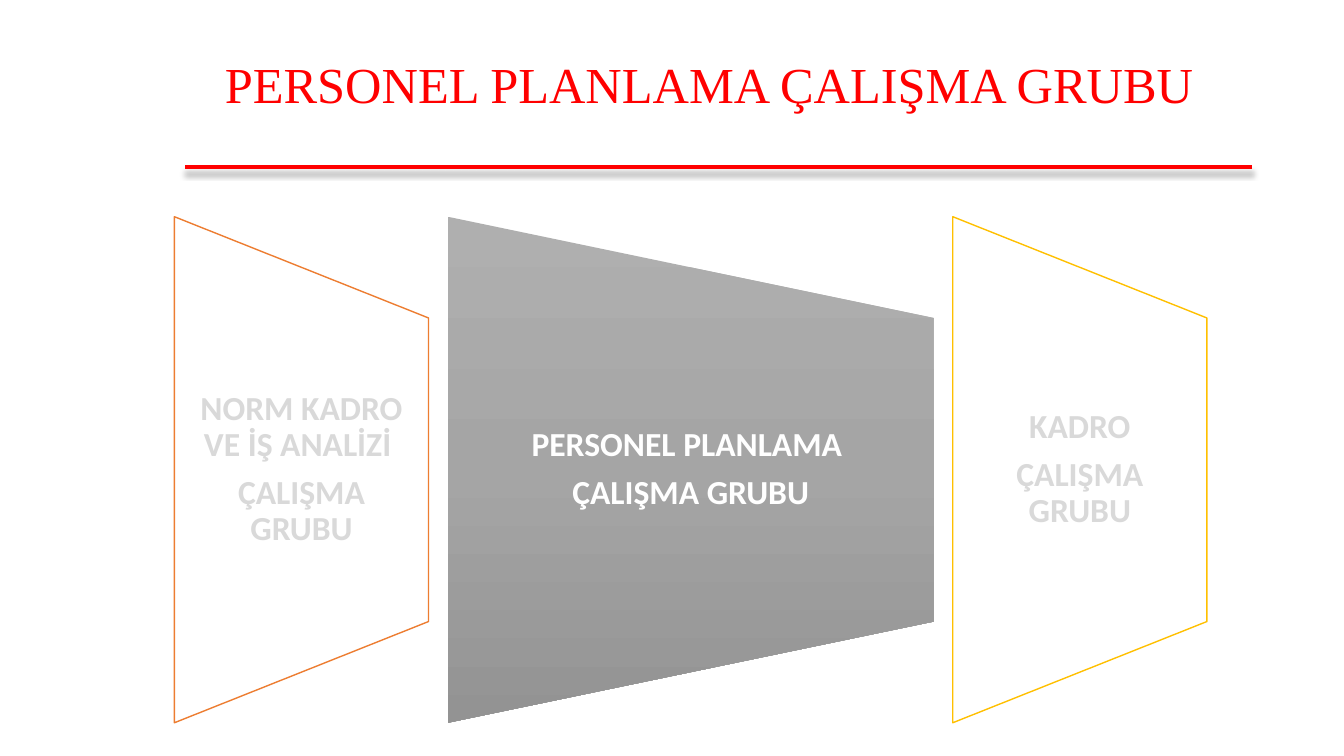
from dataclasses import dataclass

from lxml.etree import SubElement
from pptx import Presentation
from pptx.dml.color import RGBColor
from pptx.enum.shapes import MSO_CONNECTOR, MSO_SHAPE
from pptx.enum.text import MSO_ANCHOR, PP_ALIGN
from pptx.oxml import parse_xml
from pptx.oxml.ns import nsdecls, qn
from pptx.util import Inches, Pt


@dataclass(frozen=True)
class Theme:
    """Colours, fonts and type sizes of the slide."""
    red: str = "FF0000"
    white: str = "FFFFFF"
    pale: str = "D9D9D9"
    orange: str = "ED7D31"
    gold: str = "FFC000"
    gradient: tuple = ((0, "AFAFAF"), (50, "A5A5A5"), (100, "939393"))
    title_font: str = "Times New Roman"
    body_font: str = "Calibri"
    title_size: int = 36
    body_size: int = 24


THEME = Theme()
GROUP = "ÇALIŞMA GRUBU"
PANELS = (
    (2.52, ("NORM KADRO VE İŞ ANALİZİ ", GROUP), THEME.orange),
    (4.82, ("PERSONEL PLANLAMA ", GROUP), None),
    (2.52, ("KADRO", GROUP), THEME.gold),
)


def style_font(font, name, size, color):
    """Set typeface, size and colour of a font."""
    font.name = name
    font.size = Pt(size)
    font.color.rgb = RGBColor.from_string(color)


def add_title(slide, left, top, width, height):
    """Fill the title placeholder inside the given box."""
    title = slide.shapes.title
    title.left, title.top = Inches(left), Inches(top)
    title.width, title.height = Inches(width), Inches(height)
    frame = title.text_frame
    frame.text = "PERSONEL PLANLAMA ÇALIŞMA GRUBU"
    frame.vertical_anchor = MSO_ANCHOR.MIDDLE
    paragraph = frame.paragraphs[0]
    paragraph.alignment = PP_ALIGN.LEFT
    paragraph.line_spacing = 0.9
    style_font(paragraph.font, THEME.title_font, THEME.title_size, THEME.red)


def add_rule(slide, left, top, width):
    """Draw the red rule with a soft shadow below it."""
    rule = slide.shapes.add_connector(
        MSO_CONNECTOR.STRAIGHT, Inches(left + width), Inches(top), Inches(left), Inches(top))
    rule.line.color.rgb = RGBColor.from_string(THEME.red)
    rule.line.width = Pt(3)
    effects = SubElement(rule._element.spPr, qn("a:effectLst"))
    effects.append(parse_xml(
        f'<a:outerShdw {nsdecls("a")} blurRad="{Pt(4)}" dist="{Pt(4)}" dir="5400000" '
        'algn="ctr" rotWithShape="0"><a:srgbClr val="000000"><a:alpha val="25000"/>'
        '</a:srgbClr></a:outerShdw>'))


def fill_gradient(shape):
    """Give a shape the grey gradient running down the slide."""
    stops = "".join(
        f'<a:gs pos="{position * 1000}"><a:srgbClr val="{color}"/></a:gs>'
        for position, color in THEME.gradient)
    gradient = parse_xml(
        f'<a:gradFill {nsdecls("a")} rotWithShape="0"><a:gsLst>{stops}</a:gsLst>'
        '<a:lin ang="5400000" scaled="0"/></a:gradFill>')
    shape._element.spPr.find(qn("a:prstGeom")).addnext(gradient)


def add_panel(slide, left, top, width, height, lines, outline):
    """Draw one trapezoid on its side, with its label, in the given box."""
    trapezoid = slide.shapes.add_shape(
        MSO_SHAPE.FLOWCHART_MANUAL_OPERATION,
        Inches(left + (width - height) / 2), Inches(top + (height - width) / 2),
        Inches(height), Inches(width))
    trapezoid.rotation = 270
    trapezoid.shadow.inherit = False
    if outline:
        trapezoid.fill.solid()
        trapezoid.fill.fore_color.rgb = RGBColor.from_string(THEME.white)
        trapezoid.line.color.rgb = RGBColor.from_string(outline)
        trapezoid.line.width = Pt(1)
    else:
        fill_gradient(trapezoid)
        trapezoid.line.fill.background()

    label = slide.shapes.add_textbox(
        Inches(left), Inches(top + height / 5), Inches(width), Inches(height * 3 / 5))
    frame = label.text_frame
    frame.word_wrap = True
    frame.vertical_anchor = MSO_ANCHOR.MIDDLE
    frame.margin_left = frame.margin_right = Inches(0.17)
    frame.margin_top = frame.margin_bottom = 0
    frame.text = "\n".join(lines)
    for paragraph in frame.paragraphs:
        paragraph.alignment = PP_ALIGN.CENTER
        paragraph.line_spacing = 0.9
        paragraph.space_after = Pt(THEME.body_size * 0.35)
        paragraph.font.bold = True
        style_font(paragraph.font, THEME.body_font, THEME.body_size,
                   THEME.pale if outline else THEME.white)


def add_panels(slide, left, top, height, gap):
    """Set the panels side by side with equal gaps."""
    for width, lines, outline in PANELS:
        add_panel(slide, left, top, width, height, lines, outline)
        left += width + gap


def main():
    """Build and save the slide."""
    presentation = Presentation()
    presentation.slide_width, presentation.slide_height = Inches(13.33), Inches(7.5)
    slide = presentation.slides.add_slide(presentation.slide_layouts[5])
    add_rule(slide, 1.84, 1.66, 10.58)
    add_title(slide, 2.13, 0.2, 10.37, 1.33)
    add_panels(slide, 1.73, 2.15, 5.02, 0.19)
    presentation.save("out.pptx")


if __name__ == "__main__":
    main()
